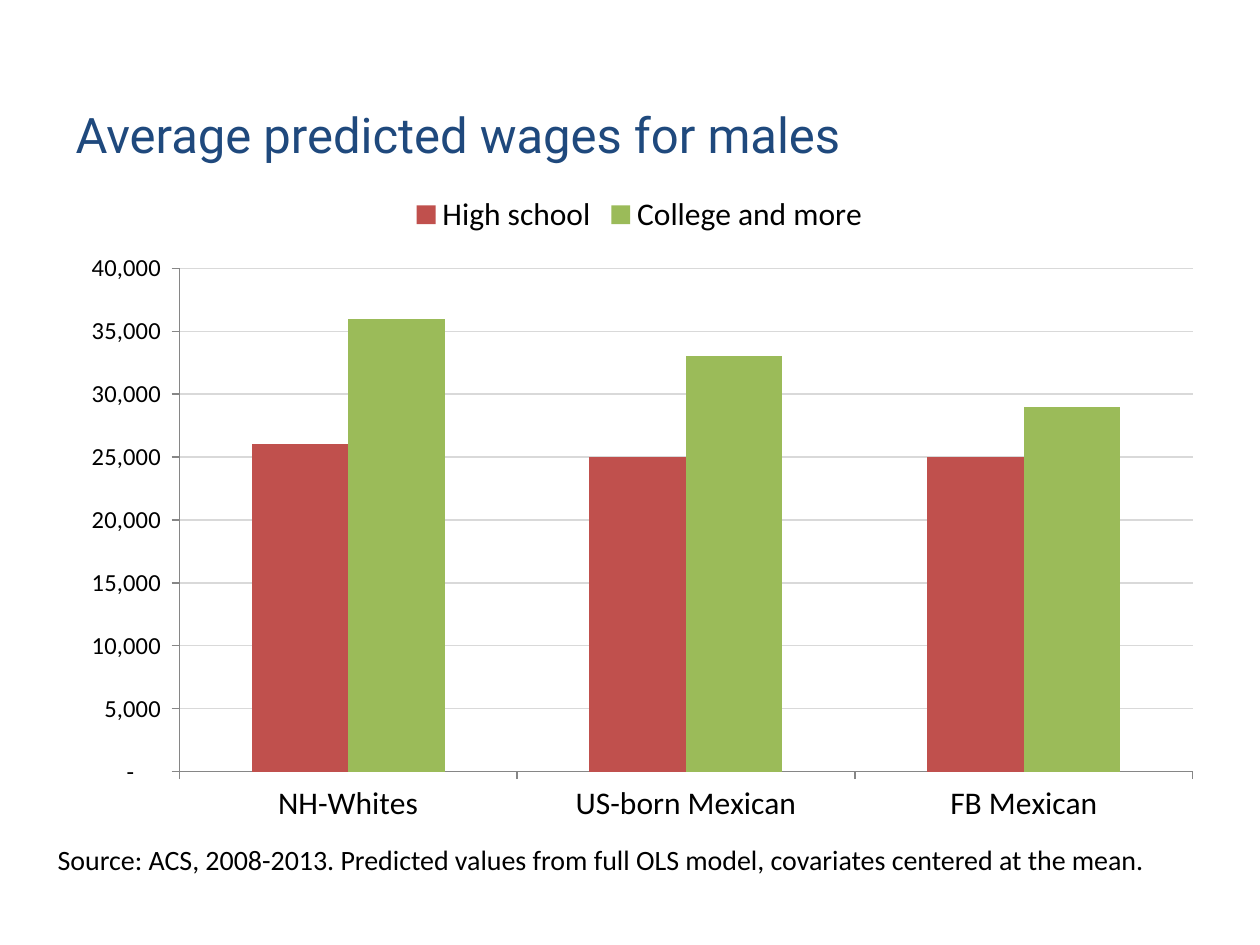
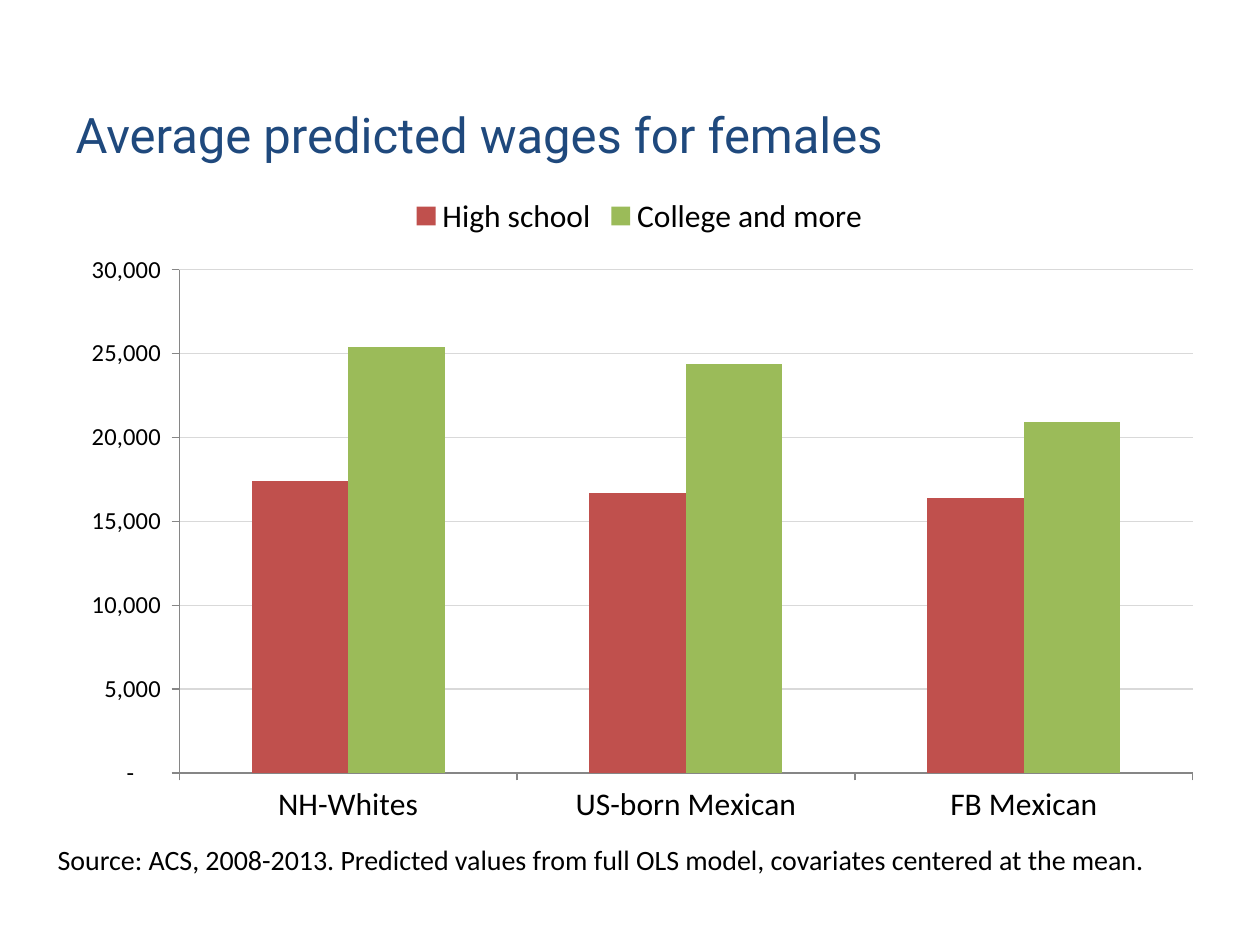
"""Build two slides of clustered columns comparing predicted wages by group and schooling."""
import pptx
import pptx.chart.data
import pptx.dml.color
import pptx.enum.chart
import pptx.enum.text
import pptx.util

Inches = pptx.util.Inches
RGBColor = pptx.dml.color.RGBColor

GROUPS = ["NH-Whites", "US-born Mexican", "FB Mexican"]
SOURCE = "Source: ACS, 2008-2013. Predicted values from full OLS model, covariates centered at the mean."
WAGES = [
    {
        "title": "Average predicted wages for males",
        "series": {"High school": (26000, 25000, 25000), "College and more": (36000, 33000, 29000)},
        "maximum": 40000,
        "chart_top": 1.43,
    },
    {
        "title": "Average predicted wages for females",
        "series": {"High school": (17400, 16700, 16400), "College and more": (25400, 24400, 20900)},
        "maximum": 30000,
        "chart_top": 1.44,
    },
]

NAVY = RGBColor(0x1F, 0x49, 0x7D)
BLACK = RGBColor(0, 0, 0)
RED = RGBColor(0xC0, 0x50, 0x4D)
GREEN = RGBColor(0x9B, 0xBB, 0x59)
GRID_GREY = RGBColor(0xD9, 0xD9, 0xD9)
AXIS_GREY = RGBColor(0x86, 0x86, 0x86)
WAGE_FORMAT = r'_(* #,##0_);_(* \(#,##0\);_(* "-"??_);_(@_)'
TITLE_ONLY = 5
LEFT, WIDTH = 0.5, 9.15
TITLE_AREA = (LEFT, 0.44, WIDTH, 1.25)
SOURCE_AREA = (0.36, 6.64, 9.06, 0.37)
CHART_HEIGHT = 5.2
WAGE_STEP = 5000


def style_font(font, size, name="Calibri", color=BLACK):
    font.size = pptx.util.Pt(size)
    font.name = name
    font.bold = False
    font.color.rgb = color


def write_text(box, text, size, name="Calibri", color=BLACK,
               anchor=pptx.enum.text.MSO_ANCHOR.TOP, fit=pptx.enum.text.MSO_AUTO_SIZE.NONE):
    frame = box.text_frame
    frame.word_wrap = True
    frame.auto_size = fit
    frame.vertical_anchor = anchor
    para = frame.paragraphs[0]
    para.alignment = pptx.enum.text.PP_ALIGN.LEFT
    span = para.add_run()
    span.text = text
    style_font(span.font, size, name, color)


def style_line(line, color):
    line.color.rgb = color
    line.width = pptx.util.Pt(0.75)


def add_wage_chart(page, wages):
    data = pptx.chart.data.CategoryChartData(number_format=WAGE_FORMAT)
    data.categories = GROUPS
    for name, values in wages["series"].items():
        data.add_series(name, values)
    area = map(Inches, (LEFT, wages["chart_top"], WIDTH, CHART_HEIGHT))
    chart = page.shapes.add_chart(pptx.enum.chart.XL_CHART_TYPE.COLUMN_CLUSTERED, *area, data).chart
    style_font(chart.font, 18)
    chart.has_title = False
    chart.has_legend = True
    chart.legend.position = pptx.enum.chart.XL_LEGEND_POSITION.TOP
    chart.legend.include_in_layout = False

    plot = chart.plots[0]
    plot.gap_width = 150
    plot.overlap = 0
    plot.vary_by_categories = False
    for series, color in zip(plot.series, (RED, GREEN)):
        series.format.fill.solid()
        series.format.fill.fore_color.rgb = color

    for axis in (chart.category_axis, chart.value_axis):
        axis.major_tick_mark = pptx.enum.chart.XL_TICK_MARK.OUTSIDE
        axis.minor_tick_mark = pptx.enum.chart.XL_TICK_MARK.NONE
        style_line(axis.format.line, AXIS_GREY)
    wage_axis = chart.value_axis
    wage_axis.minimum_scale = 0
    wage_axis.maximum_scale = wages["maximum"]
    wage_axis.major_unit = WAGE_STEP
    wage_axis.has_major_gridlines = True
    style_line(wage_axis.major_gridlines.format.line, GRID_GREY)
    wage_axis.tick_labels.number_format = WAGE_FORMAT
    wage_axis.tick_labels.number_format_is_linked = False
    style_font(wage_axis.tick_labels.font, 14)


def add_wage_page(deck, wages):
    page = deck.slides.add_slide(deck.slide_layouts[TITLE_ONLY])
    title = page.shapes.title
    title.left, title.top, title.width, title.height = map(Inches, TITLE_AREA)
    write_text(title, wages["title"], 28, name="Roboto", color=NAVY,
               anchor=pptx.enum.text.MSO_ANCHOR.MIDDLE)
    write_text(page.shapes.add_textbox(*map(Inches, SOURCE_AREA)), SOURCE, 16,
               fit=pptx.enum.text.MSO_AUTO_SIZE.SHAPE_TO_FIT_TEXT)
    add_wage_chart(page, wages)


def main():
    deck = pptx.Presentation()
    deck.slide_width, deck.slide_height = Inches(10), Inches(7.5)
    for wages in WAGES:
        add_wage_page(deck, wages)
    deck.save("out.pptx")


if __name__ == "__main__":
    main()
